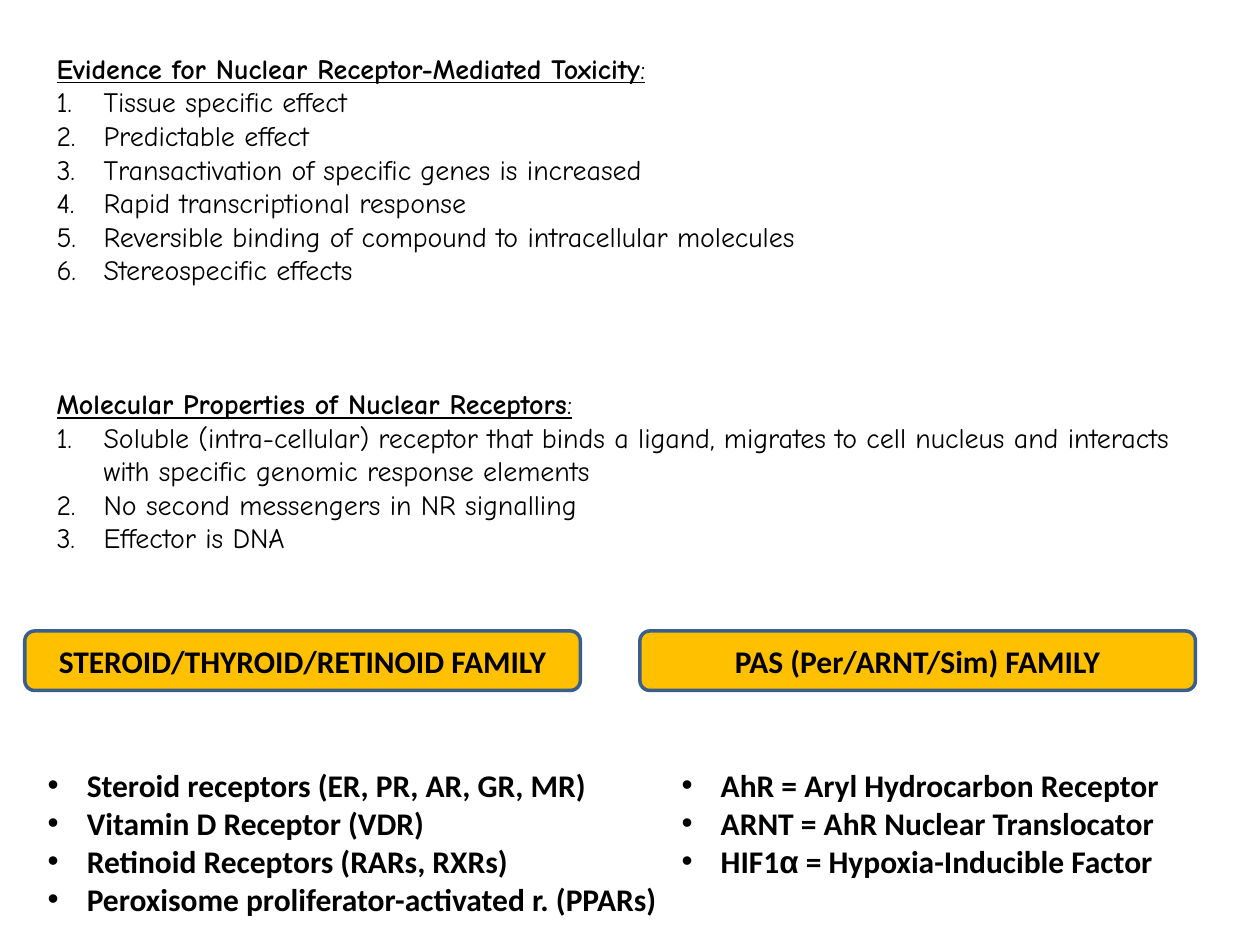
from lxml import etree
from pptx import Presentation
from pptx.dml.color import RGBColor
from pptx.enum import shapes, text
from pptx.oxml.ns import qn
from pptx.util import Cm, Pt

COLORS = {"ink": "000000", "banner": "FFC000", "border": "3A5F8C"}

# (heading, numbered points, (left, top, width, height) in cm, wrap)
SECTIONS = [
    ("Evidence for Nuclear Receptor-Mediated Toxicity",
     ["Tissue specific effect",
      "Predictable effect",
      "Transactivation of specific genes is increased",
      "Rapid transcriptional response",
      "Reversible binding of compound to intracellular molecules",
      "Stereospecific effects"],
     (0.89, 0.91, 16.66, 5.05), False),
    ("Molecular Properties of Nuclear Receptors",
     ["Soluble (intra-cellular) receptor that binds a ligand, migrates to cell "
      "nucleus and interacts with specific genomic response elements",
      "No second messengers in NR signalling",
      "Effector is DNA"],
     (0.89, 7.67, 24.0, 3.68), True),
]

# (banner, banner left, members as lists of (text, font), list box in cm)
BODY, GREEK = "Calibri", "Arial"
FAMILIES = [
    ("STEROID/THYROID/RETINOID FAMILY", 0.5,
     [[("Steroid receptors (ER, PR, AR, GR, MR)", BODY)],
      [("Vitamin D Receptor (VDR)", BODY)],
      [("Retinoid Receptors (RARs, RXRs)", BODY)],
      [("Peroxisome proliferator-activated r. (PPARs)", BODY)]],
     (0.71, 15.32, 13.16, 3.33)),
    ("PAS (Per/ARNT/Sim) FAMILY", 12.9,
     [[("AhR = Aryl Hydrocarbon Receptor", BODY)],
      [("ARNT = AhR Nuclear Translocator", BODY)],
      [("HIF1", BODY), ("α", GREEK), (" = Hypoxia-Inducible Factor", BODY)]],
     (13.49, 15.32, 10.21, 2.57)),
]
BANNER_TOP, BANNER_W, BANNER_H = 12.72, 11.2, 1.2


def add_run(p, content, font=BODY, size=18, bold=False, underline=False):
    r = p.add_run()
    r.text = content
    f = r.font
    f.name, f.size, f.bold, f.underline = font, Pt(size), bold, underline
    f.color.rgb = RGBColor.from_string(COLORS["ink"])


def set_marker(p, indent, bullet=None):
    """Hang the paragraph on a bullet, or on an automatic number if none is given."""
    pPr = p._p.get_or_add_pPr()
    pPr.set("marL", str(Cm(indent)))
    pPr.set("indent", str(-Cm(indent)))
    if bullet:
        etree.SubElement(pPr, qn("a:buFont"), typeface="Arial")
        etree.SubElement(pPr, qn("a:buChar"), char=bullet)
    else:
        etree.SubElement(pPr, qn("a:buFont"), typeface="+mj-lt")
        etree.SubElement(pPr, qn("a:buAutoNum"), type="arabicPeriod")


def add_textbox(slide, box, wrap):
    tf = slide.shapes.add_textbox(*map(Cm, box)).text_frame
    tf.word_wrap = wrap
    tf.auto_size = text.MSO_AUTO_SIZE.SHAPE_TO_FIT_TEXT
    return tf


def add_section(slide, heading, points, box, wrap):
    tf = add_textbox(slide, box, wrap)
    style = {"font": "Comic Neue", "size": 16}
    p = tf.paragraphs[0]
    add_run(p, heading, bold=True, underline=True, **style)
    add_run(p, ":", underline=True, **style)
    for point in points:
        p = tf.add_paragraph()
        set_marker(p, 0.95)
        add_run(p, point, **style)


def add_banner(slide, title, left):
    sp = slide.shapes.add_shape(
        shapes.MSO_SHAPE.ROUNDED_RECTANGLE,
        Cm(left), Cm(BANNER_TOP), Cm(BANNER_W), Cm(BANNER_H))
    sp.shadow.inherit = False
    sp.fill.solid()
    sp.fill.fore_color.rgb = RGBColor.from_string(COLORS["banner"])
    sp.line.color.rgb = RGBColor.from_string(COLORS["border"])
    sp.line.width = Pt(2)
    tf = sp.text_frame
    tf.vertical_anchor = text.MSO_ANCHOR.MIDDLE
    p = tf.paragraphs[0]
    p.alignment = text.PP_ALIGN.CENTER
    add_run(p, title, bold=True)


def add_members(slide, members, box):
    tf = add_textbox(slide, box, wrap=False)
    for i, runs in enumerate(members):
        p = tf.add_paragraph() if i else tf.paragraphs[0]
        set_marker(p, 0.79, "•")
        for content, font in runs:
            add_run(p, content, font=font, bold=True)


def main():
    prs = Presentation()
    prs.slide_width, prs.slide_height = Cm(25.4), Cm(19.05)
    slide = prs.slides.add_slide(prs.slide_layouts[6])
    for section in SECTIONS:
        add_section(slide, *section)
    for title, left, members, box in FAMILIES:
        add_banner(slide, title, left)
        add_members(slide, members, box)
    prs.save("out.pptx")


if __name__ == "__main__":
    main()
